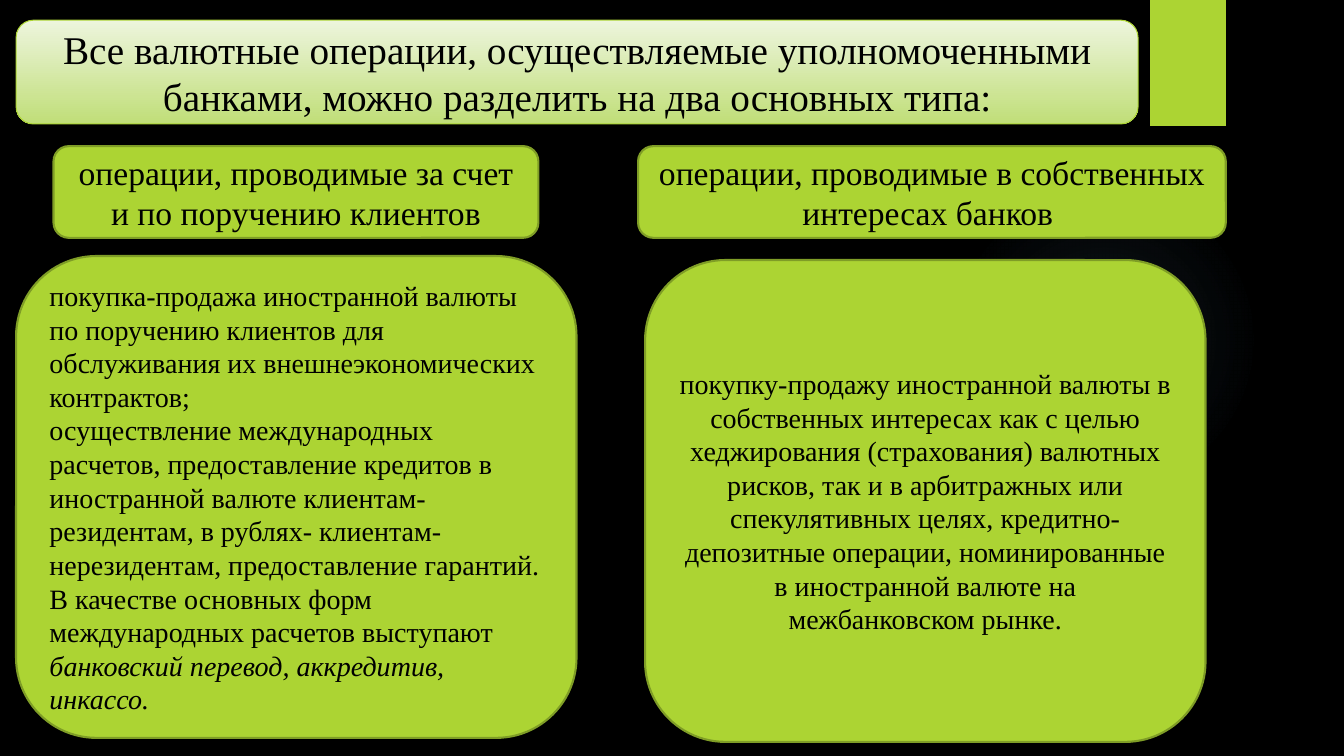
from lxml import etree
from pptx import Presentation
from pptx.dml.color import RGBColor
from pptx.enum.shapes import MSO_SHAPE as Shape
from pptx.enum.text import MSO_ANCHOR as Anchor, PP_ALIGN as Align
from pptx.oxml.ns import qn
from pptx.util import Inches, Pt

WIDTH, HEIGHT = Inches(13.333), Inches(7.5)
COLUMN, ROW = WIDTH / 100, HEIGHT / 100

BLACK = RGBColor(0x00, 0x00, 0x00)
LIME = RGBColor(0xAC, 0xD4, 0x33)
OLIVE = RGBColor(0x7F, 0x9D, 0x26)
PALE = RGBColor(0xED, 0xF5, 0xDD)
SOFT_LIME = RGBColor(0xC0, 0xDE, 0x78)
SKY = RGBColor(0x7A, 0xC4, 0xF0)
FONT = "Times New Roman"

HEADING = "Все валютные операции, осуществляемые уполномоченными банками, можно разделить на два основных типа:"
CLIENT_TITLE = "операции, проводимые за счет и по поручению клиентов"
BANK_TITLE = "операции, проводимые в собственных интересах банков "
CLIENT_TRADE = (
    "покупка-продажа иностранной валюты по поручению клиентов для "
    "обслуживания их внешнеэкономических контрактов;"
)
CLIENT_SETTLEMENTS = (
    "осуществление международных расчетов, предоставление кредитов в "
    "иностранной валюте клиентам-резидентам, в рублях- клиентам-нерезидентам, "
    "предоставление гарантий. В качестве основных форм международных расчетов выступают "
)
SETTLEMENT_FORMS = "банковский перевод, аккредитив, инкассо."
BANK_TRADE = (
    "покупку-продажу иностранной валюты в собственных интересах как с целью "
    "хеджирования (страхования) валютных рисков, так и в арбитражных или "
    "спекулятивных целях, кредитно-депозитные операции, номинированные в "
    "иностранной валюте на межбанковском рынке."
)


def add_block(slide, kind, column, row, columns, rows, fill=LIME):
    """Add a plain shape without outline, placed on the grid."""
    block = slide.shapes.add_shape(
        kind, round(column * COLUMN), round(row * ROW), round(columns * COLUMN), round(rows * ROW)
    )
    block.shadow.inherit = False
    block.fill.solid()
    block.fill.fore_color.rgb = fill
    block.line.fill.background()
    return block


def add_panel(slide, place, paragraphs, size, align=Align.CENTER, outline=OLIVE, weight=1.5):
    """Add an outlined rounded panel; paragraphs are lists of (text, italic)."""
    panel = add_block(slide, Shape.ROUNDED_RECTANGLE, *place)
    panel.line.color.rgb = outline
    panel.line.width = Pt(weight)
    frame = panel.text_frame
    frame.word_wrap = True
    frame.vertical_anchor = Anchor.MIDDLE
    for index, pieces in enumerate(paragraphs):
        paragraph = frame.add_paragraph() if index else frame.paragraphs[0]
        paragraph.alignment = align
        for text, italic in pieces:
            run = paragraph.add_run()
            run.text = text
            run.font.name = FONT
            run.font.size = Pt(size)
            run.font.color.rgb = BLACK
            run.font.italic = italic
    return panel


def add_glow(slide):
    """Add the faint round glow that fades out from its centre."""
    glow = add_block(slide, Shape.OVAL, 70.58, 24.4, 23.1, 41.07)
    properties = glow.fill._xPr
    gradient = etree.Element(qn("a:gradFill"))
    stops = etree.SubElement(gradient, qn("a:gsLst"))
    for position, alpha in ((0, 7), (36, 6), (69, 0)):
        stop = etree.SubElement(stops, qn("a:gs"), pos=str(position * 1000))
        color = etree.SubElement(stop, qn("a:srgbClr"), val=str(SKY))
        etree.SubElement(color, qn("a:alpha"), val=str(alpha * 1000))
    circle = etree.SubElement(gradient, qn("a:path"), path="circle")
    etree.SubElement(circle, qn("a:fillToRect"), l="50000", t="50000", r="50000", b="50000")
    properties.replace(properties.find(qn("a:solidFill")), gradient)


def add_heading(slide):
    """Add the heading panel with its vertical gradient."""
    heading = add_panel(
        slide, (1.2, 2.67, 83.48, 13.73), [[(HEADING, False)]], 28, outline=LIME, weight=0.75
    )
    heading.fill.gradient()
    heading.fill.gradient_angle = 270
    for stop, color, position in zip(heading.fill.gradient_stops, (PALE, SOFT_LIME), (0, 1)):
        stop.color.rgb = color
        stop.position = position


def main():
    """Build and save the slide."""
    deck = Presentation()
    deck.slide_width, deck.slide_height = WIDTH, HEIGHT
    slide = deck.slides.add_slide(deck.slide_layouts[6])
    slide.background.fill.solid()
    slide.background.fill.fore_color.rgb = BLACK

    add_glow(slide)
    add_block(slide, Shape.RECTANGLE, 85.58, 0, 5.63, 16.67)
    add_heading(slide)

    for title, column, columns in ((CLIENT_TITLE, 3.98, 36.08), (BANK_TITLE, 47.48, 43.73)):
        add_panel(slide, (column, 19.33, columns, 12.13), [[(title, False)]], 24)

    client_details = [
        [(CLIENT_TRADE, False)],
        [(CLIENT_SETTLEMENTS, False), (SETTLEMENT_FORMS, True)],
    ]
    bank_details = [[(BANK_TRADE, False)]]
    for details, column, row, align in (
        (client_details, 1.2, 33.87, Align.LEFT),
        (bank_details, 48, 34.4, Align.CENTER),
    ):
        add_panel(slide, (column, row, 41.7, 63.73), details, 20, align)

    deck.save("out.pptx")


if __name__ == "__main__":
    main()
